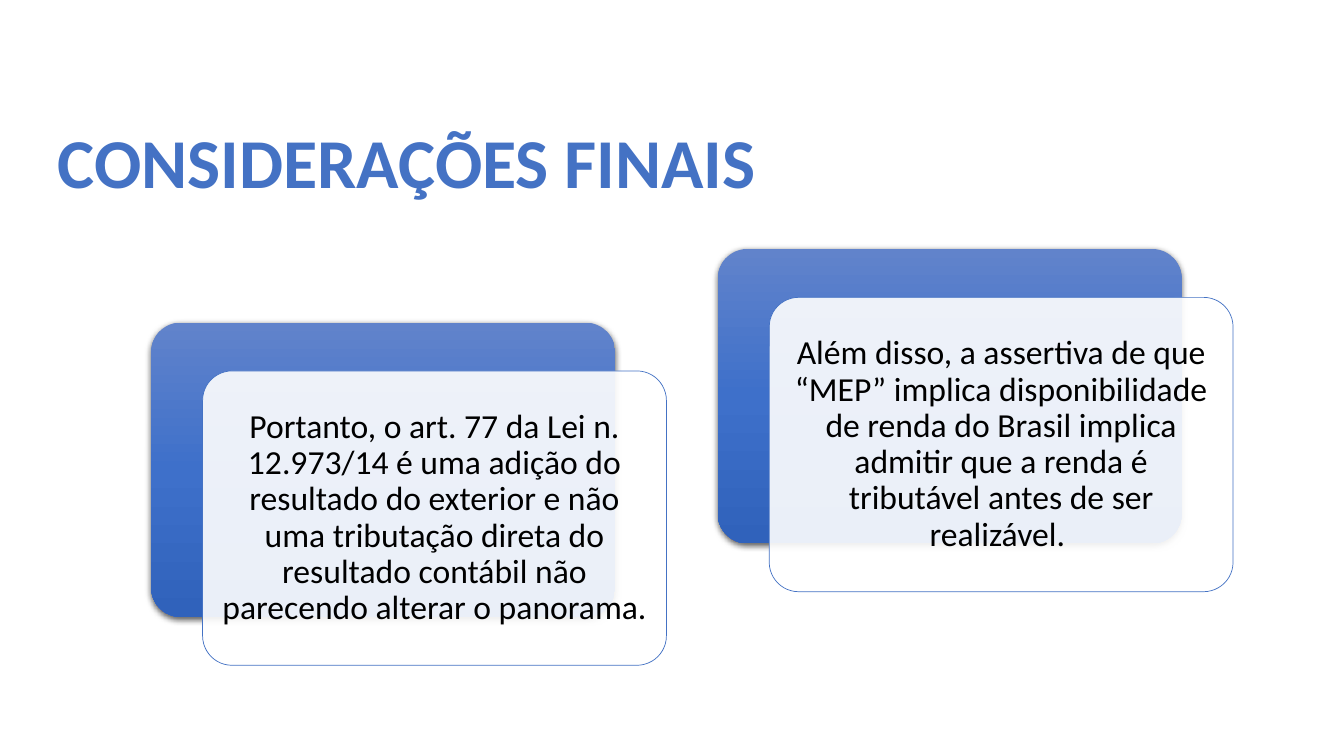
from dataclasses import dataclass

from copy import deepcopy
from lxml.etree import SubElement
from pptx import Presentation
from pptx.dml.color import RGBColor
from pptx.enum.shapes import MSO_SHAPE
from pptx.enum.text import MSO_ANCHOR, PP_ALIGN
from pptx.oxml.ns import qn
from pptx.shapes.autoshape import Shape
from pptx.slide import Slide
from pptx.util import Inches, Pt

BLUE = RGBColor(0x44, 0x72, 0xC4)
BLACK = RGBColor(0x00, 0x00, 0x00)
WHITE = RGBColor(0xFF, 0xFF, 0xFF)
GRADIENT = (
    RGBColor(0x61, 0x83, 0xCB),
    RGBColor(0x3E, 0x70, 0xCA),
    RGBColor(0x30, 0x62, 0xBB),
)
FONT = "Calibri"
CARD_W, CARD_H = 4.6, 2.92
OFFSET_X, OFFSET_Y = 0.51, 0.48


@dataclass(frozen=True)
class Card:
    left: float
    top: float
    text: str


CARDS = (
    Card(1.5, 3.2, "Portanto, o art. 77 da Lei n. 12.973/14 é uma adição do resultado "
                   "do exterior e não uma tributação direta do resultado contábil não "
                   "parecendo alterar o panorama. "),
    Card(7.12, 2.47, "Além disso, a assertiva de que “MEP” implica disponibilidade de "
                     "renda do Brasil implica admitir que a renda é tributável antes "
                     "de ser realizável. "),
)


def add_round_rect(slide: Slide, left: float, top: float) -> Shape:
    sp = slide.shapes.add_shape(
        MSO_SHAPE.ROUNDED_RECTANGLE,
        Inches(left), Inches(top), Inches(CARD_W), Inches(CARD_H),
    )
    sp.adjustments[0] = 0.1
    sp.shadow.inherit = False
    return sp


def fill_gradient(sp: Shape) -> None:
    sp.fill.gradient()
    sp.fill.gradient_angle = 270
    stops = sp._element.spPr.find(qn("a:gradFill")).find(qn("a:gsLst"))
    stops.insert(1, deepcopy(stops[0]))
    for i, (stop, color) in enumerate(zip(sp.fill.gradient_stops, GRADIENT)):
        stop.position = i / 2
        stop.color.rgb = color


def add_shadow(sp: Shape) -> None:
    effects = sp._element.spPr.find(qn("a:effectLst"))
    shadow = SubElement(
        effects, qn("a:outerShdw"), blurRad=str(Pt(4.5)), dist=str(Pt(1.5)),
        dir="5400000", algn="ctr", rotWithShape="0",
    )
    color = SubElement(shadow, qn("a:srgbClr"), val=str(BLACK))
    SubElement(color, qn("a:alpha"), val="63000")


def add_card(slide: Slide, card: Card) -> None:
    back = add_round_rect(slide, card.left, card.top)
    fill_gradient(back)
    back.line.fill.background()
    add_shadow(back)

    panel = add_round_rect(slide, card.left + OFFSET_X, card.top + OFFSET_Y)
    panel.fill.solid()
    panel.fill.fore_color.rgb = WHITE
    fill_color = panel._element.spPr.find(qn("a:solidFill")).find(qn("a:srgbClr"))
    SubElement(fill_color, qn("a:alpha"), val="90000")
    panel.line.color.rgb = BLUE
    panel.line.width = Pt(0.5)

    tf = panel.text_frame
    tf.word_wrap = True
    tf.vertical_anchor = MSO_ANCHOR.MIDDLE
    tf.margin_left = tf.margin_right = tf.margin_top = tf.margin_bottom = Inches(0.1)
    p = tf.paragraphs[0]
    p.text = card.text
    p.alignment = PP_ALIGN.CENTER
    p.line_spacing = 0.9
    p.font.name = FONT
    p.font.size = Pt(24)
    p.font.color.rgb = BLACK


def add_title(slide: Slide, text: str) -> None:
    title = slide.shapes.title
    title.left, title.top = Inches(0.47), Inches(1.03)
    title.width, title.height = Inches(7.54), Inches(1.24)
    tf = title.text_frame
    tf.word_wrap = True
    tf.vertical_anchor = MSO_ANCHOR.MIDDLE
    p = tf.paragraphs[0]
    p.text = text
    p.alignment = PP_ALIGN.LEFT
    p.line_spacing = 0.9
    p.font.name = FONT
    p.font.size = Pt(50)
    p.font.bold = True
    p.font.color.rgb = BLUE


def main() -> None:
    prs = Presentation()
    prs.slide_width, prs.slide_height = Inches(13.33), Inches(7.5)
    slide = prs.slides.add_slide(prs.slide_layouts[5])
    add_title(slide, "CONSIDERAÇÕES FINAIS")
    for card in CARDS:
        add_card(slide, card)
    prs.save("out.pptx")


if __name__ == "__main__":
    main()
